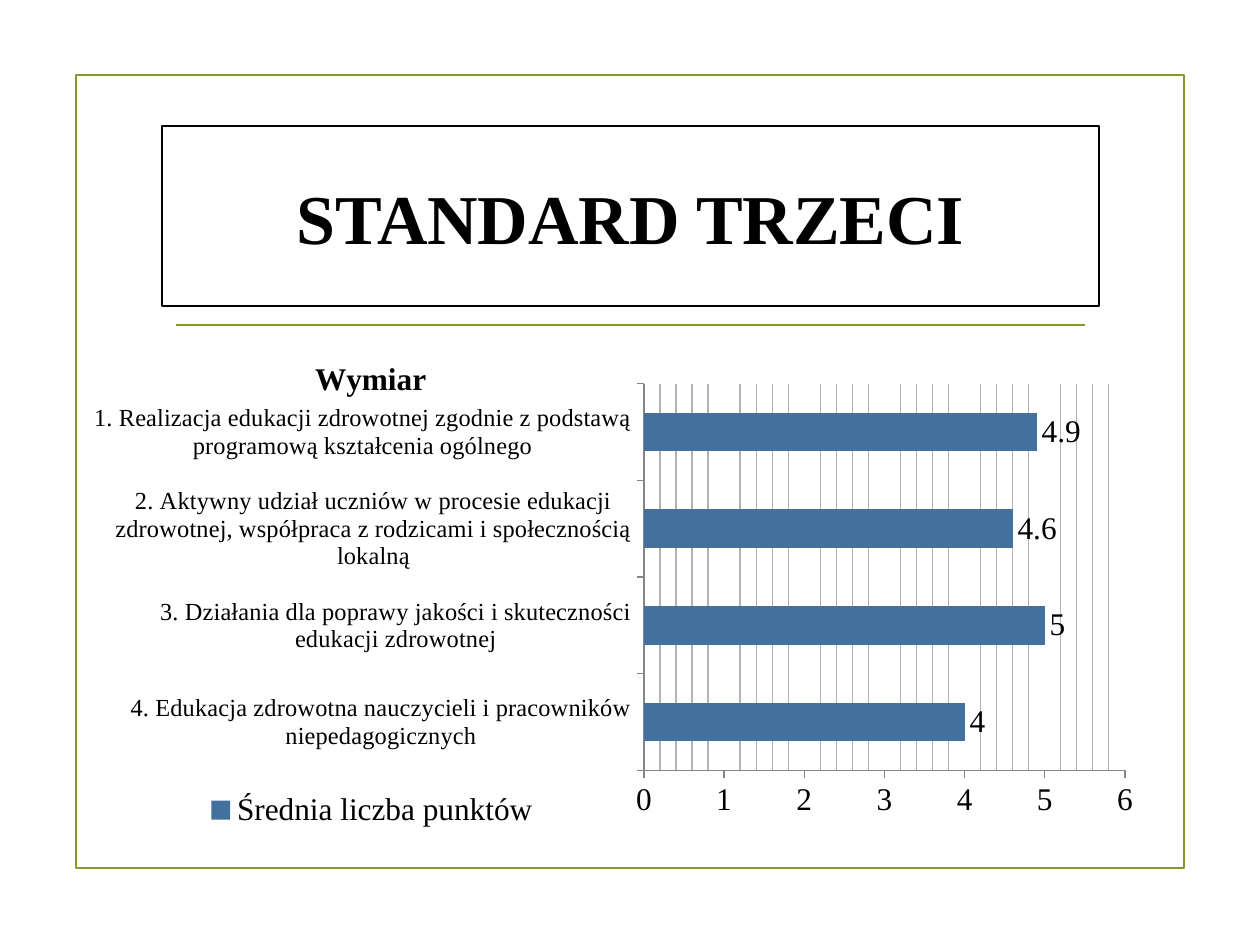
from lxml.etree import SubElement
from pptx import Presentation
from pptx.chart.data import CategoryChartData
from pptx.dml.color import RGBColor
from pptx.enum.chart import XL_CHART_TYPE, XL_LABEL_POSITION, XL_LEGEND_POSITION, XL_TICK_MARK
from pptx.enum.shapes import MSO_CONNECTOR, MSO_SHAPE
from pptx.enum.text import MSO_ANCHOR, PP_ALIGN
from pptx.oxml import parse_xml
from pptx.oxml.ns import qn
from pptx.util import Pt

PX = 914400 / 126
FACE = "Times New Roman"
BLACK = RGBColor(0x00, 0x00, 0x00)
WHITE = RGBColor(0xFF, 0xFF, 0xFF)
GREEN = RGBColor(0x83, 0x99, 0x2A)
BLUE = RGBColor(0x44, 0x70, 0x9D)
GRID = RGBColor(0xB3, 0xB3, 0xB3)
GRAY = RGBColor(0x86, 0x86, 0x86)


def write(frame, text, size, bold=False, color=BLACK, align=PP_ALIGN.CENTER):
    para = frame.paragraphs[0]
    para.alignment = align
    run = para.add_run()
    run.text = text
    run.font.name = FACE
    run.font.size = Pt(size)
    run.font.bold = bold
    run.font.color.rgb = color


def place(part, index, **spots):
    for old in part.findall(qn("c:layout")):
        part.remove(old)
    layout = parse_xml('<c:layout xmlns:c="http://schemas.openxmlformats.org/drawingml/2006/chart"/>')
    manual = SubElement(layout, qn("c:manualLayout"))
    for tag, val in spots.items():
        SubElement(manual, qn("c:" + tag)).set("val", str(val))
    part.insert(index, layout)


deck = Presentation()
deck.slide_width = round(1260 * PX)
deck.slide_height = round(945 * PX)
slide = deck.slides.add_slide(deck.slide_layouts[6])
shapes = slide.shapes

boxes = []
for spot, color in [((76, 75, 1108, 793), GREEN), ((162, 126, 937, 180), BLACK)]:
    box = shapes.add_shape(MSO_SHAPE.RECTANGLE, *[round(n * PX) for n in spot])
    box.shadow.inherit = False
    box.fill.background()
    box.line.color.rgb = color
    box.line.width = Pt(1.25)
    boxes.append(box)

head = boxes[1]
head.fill.solid()
head.fill.fore_color.rgb = WHITE
head.text_frame.word_wrap = True
head.text_frame.vertical_anchor = MSO_ANCHOR.MIDDLE
write(head.text_frame, "STANDARD TRZECI", 40, bold=True)

rule = shapes.add_connector(MSO_CONNECTOR.STRAIGHT, *[round(n * PX) for n in (176, 325, 1085, 325)])
rule.line.color.rgb = GREEN
rule.line.width = Pt(1.25)
SubElement(rule._element.spPr, qn("a:effectLst"))

data = CategoryChartData()
data.categories = [
    "4. Edukacja zdrowotna nauczycieli i pracowników niepedagogicznych",
    "3. Działania dla poprawy jakości i skuteczności edukacji zdrowotnej",
    "2. Aktywny udział uczniów w procesie edukacji zdrowotnej, współpraca z rodzicami i społecznością lokalną",
    "1. Realizacja edukacji zdrowotnej zgodnie z podstawą programową kształcenia ogólnego",
]
data.add_series("Średnia liczba punktów", (4, 5, 4.6, 4.9))
spot = [round(n * PX) for n in (94, 344, 1052, 496)]
chart = shapes.add_chart(XL_CHART_TYPE.BAR_CLUSTERED, *spot, data).chart
chart.font.name = FACE
chart.font.size = Pt(18)
chart.font.color.rgb = BLACK

chart.has_title = True
write(chart.chart_title.text_frame, "Wymiar", 18, bold=True)
place(chart.chart_title._element, 1, xMode="edge", yMode="edge", x=0.2, y=0.02)

chart.has_legend = True
chart.legend.position = XL_LEGEND_POSITION.RIGHT
chart.legend.include_in_layout = False
place(chart.legend._element, 1, xMode="edge", yMode="edge", x=0.1, y=0.89, w=0.32, h=0.1)
place(chart._chartSpace.chart.plotArea, 0, layoutTarget="inner", xMode="edge", yMode="edge",
      x=0.52, y=0.08, w=0.46, h=0.78)

plot = chart.plots[0]
plot.vary_by_categories = False
plot.gap_width = 150
bars = plot.series[0]
bars.format.fill.solid()
bars.format.fill.fore_color.rgb = BLUE
plot.has_data_labels = True
tags = plot.data_labels
tags.show_value = True
tags.position = XL_LABEL_POSITION.OUTSIDE_END
tags.font.name = FACE
tags.font.size = Pt(18)
tags.font.color.rgb = BLACK

for axis, size in [(chart.category_axis, 14), (chart.value_axis, 18)]:
    axis.tick_labels.font.name = FACE
    axis.tick_labels.font.size = Pt(size)
    axis.tick_labels.font.color.rgb = BLACK
    axis.major_tick_mark = XL_TICK_MARK.OUTSIDE
    axis.minor_tick_mark = XL_TICK_MARK.NONE
    axis.format.line.color.rgb = GRAY
    axis.has_major_gridlines = False

scale = chart.value_axis
scale.minimum_scale = 0
scale.maximum_scale = 6
scale.major_unit = 1
scale.minor_unit = 0.2
scale.has_minor_gridlines = True
grid = scale._element.find(qn("c:minorGridlines"))
line = SubElement(SubElement(grid, qn("c:spPr")), qn("a:ln"))
fill = SubElement(line, qn("a:solidFill"))
SubElement(fill, qn("a:srgbClr")).set("val", str(GRID))

deck.save("out.pptx")
